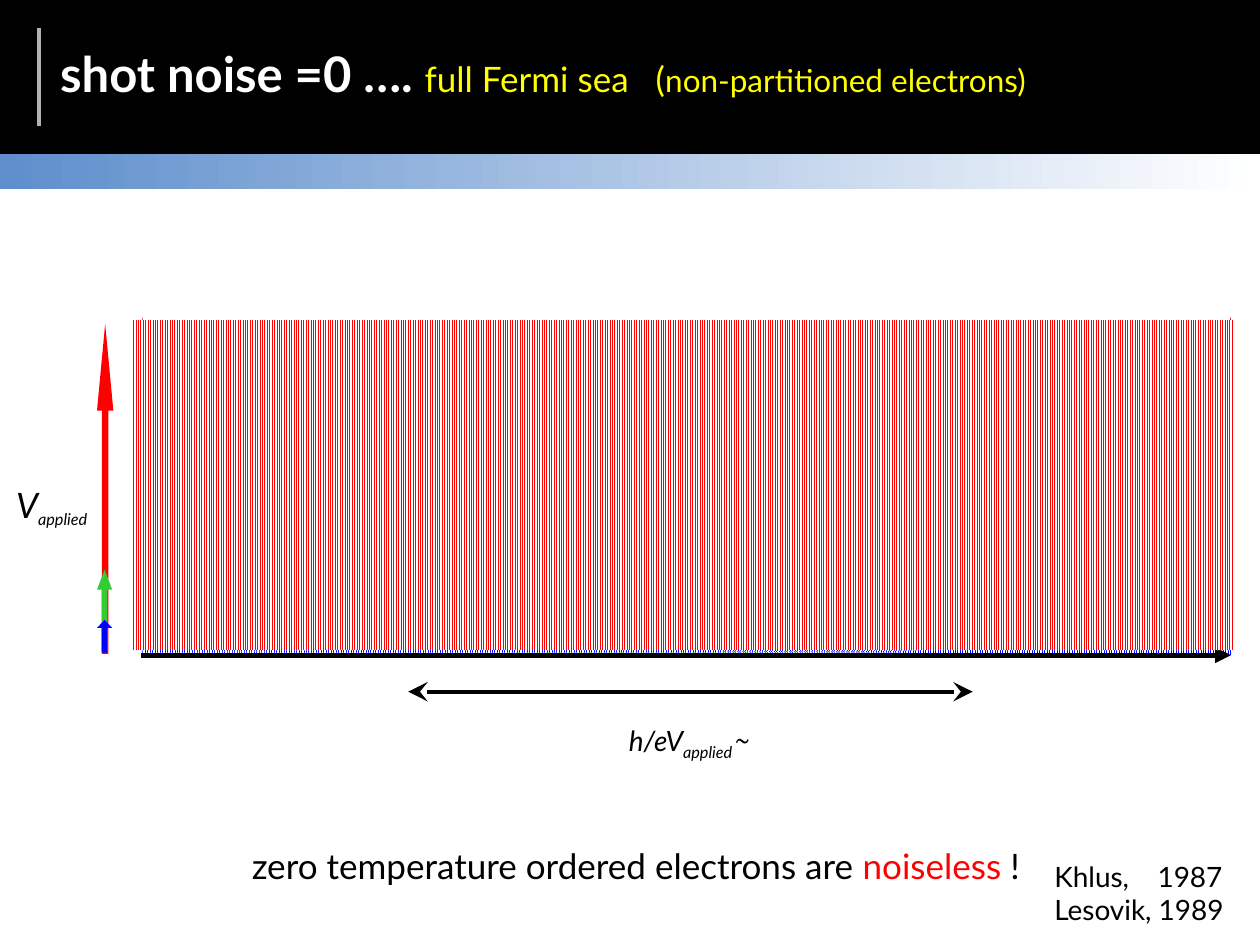
import lxml.etree
import pptx
import pptx.dml.color
import pptx.enum.dml
import pptx.enum.shapes
import pptx.enum.text
import pptx.oxml.ns
import pptx.util

Inches = pptx.util.Inches
RGBColor = pptx.dml.color.RGBColor
MSO_SHAPE = pptx.enum.shapes.MSO_SHAPE
MSO_AUTO_SIZE = pptx.enum.text.MSO_AUTO_SIZE
qn = pptx.oxml.ns.qn

BLACK = RGBColor(0x00, 0x00, 0x00)
WHITE = RGBColor(0xFF, 0xFF, 0xFF)
GREY = RGBColor(0xB2, 0xB2, 0xB2)
SKY = RGBColor(0x5E, 0x8E, 0xCC)
RED = RGBColor(0xFF, 0x00, 0x00)
GREEN = RGBColor(0x33, 0xCC, 0x33)
BLUE = RGBColor(0x00, 0x00, 0xFF)
YELLOW = RGBColor(0xFF, 0xFF, 0x00)

FONT = "Lato"

# Wave outlines: a start point, then cubic segments of three points each.
# The half waves at the edges end with one straight line to their foot.
RED_WAVE = [(2.11, 5.19), (2.08, 5.13), (1.99, 5.25), (1.91, 4.81),
            (1.84, 4.37), (1.76, 2.55), (1.68, 2.54),
            (1.6, 2.54), (1.51, 4.34), (1.44, 4.78),
            (1.36, 5.22), (1.29, 5.11), (1.25, 5.19)]
RED_EDGE = [(1.53, 5.18), (1.5, 5.13), (1.4, 5.26), (1.33, 4.81),
            (1.27, 4.37), (1.16, 2.46), (1.13, 2.52), (1.14, 5.19)]
GREEN_WAVE = [(4.98, 5.19), (4.85, 5.17), (4.47, 5.2), (4.18, 5.09),
              (3.89, 4.98), (3.55, 4.53), (3.24, 4.53),
              (2.92, 4.53), (2.56, 4.98), (2.27, 5.09),
              (1.98, 5.2), (1.67, 5.17), (1.51, 5.19)]
GREEN_EDGE = [(2.77, 5.19), (2.63, 5.17), (2.24, 5.21), (1.97, 5.1),
              (1.69, 4.98), (1.27, 4.51), (1.14, 4.52), (1.14, 5.18)]
BLUE_WAVE = [(9.79, 5.18), (9.46, 5.18), (8.53, 5.19), (7.81, 5.14),
             (7.08, 5.1), (6.23, 4.92), (5.44, 4.92),
             (4.64, 4.92), (3.74, 5.1), (3.02, 5.14),
             (2.3, 5.18), (1.52, 5.17), (1.13, 5.18)]
BLUE_EDGE = [(5.21, 5.17), (4.87, 5.16), (3.88, 5.19), (3.2, 5.14),
             (2.52, 5.1), (1.47, 4.91), (1.13, 4.92), (1.13, 5.2)]


def fill_pattern(shape, color):
    shape.fill.patterned()
    shape.fill.pattern = pptx.enum.dml.MSO_PATTERN.NARROW_VERTICAL
    shape.fill.fore_color.rgb = color
    shape.fill.back_color.rgb = WHITE


def add_block(shapes, kind, box, color=None):
    shape = shapes.add_shape(kind, *map(Inches, box))
    shape.shadow.inherit = False
    shape.line.fill.background()
    if color is not None:
        shape.fill.solid()
        shape.fill.fore_color.rgb = color
    return shape


def add_line(shapes, start, end, color, width, head_size="med", **arrowheads):
    line = shapes.add_connector(pptx.enum.shapes.MSO_CONNECTOR.STRAIGHT,
                                *map(Inches, start + end))
    line.line.color.rgb = color
    line.line.width = pptx.util.Pt(width)
    outline = line.line._get_or_add_ln()
    for tag, kind in arrowheads.items():
        lxml.etree.SubElement(outline, qn("a:" + tag),
                              type=kind, w=head_size, len=head_size)
    lxml.etree.SubElement(line._element.spPr, qn("a:effectLst"))


def add_wave(shapes, controls, color):
    corners = [(Inches(x), Inches(y)) for x, y in controls]
    builder = shapes.build_freeform(*corners[0])
    builder.add_line_segments(corners[1:], close=False)
    wave = builder.convert_to_shape()
    wave.shadow.inherit = False
    wave.line.fill.background()
    fill_pattern(wave, color)
    # Join every three straight segments into one cubic curve
    segments = list(wave._element.iter(qn("a:lnTo")))
    for first in range(0, len(segments) - 2, 3):
        curve, *others = segments[first:first + 3]
        curve.tag = qn("a:cubicBezTo")
        for segment in others:
            curve.append(segment[0])
            segment.getparent().remove(segment)


def add_wave_family(slide, color, wave, edge, count, pitch, mirror_sum,
                    arrow_box, head):
    """Equally spaced waves, two mirrored half waves and a voltage arrow."""
    shapes = slide.shapes.add_group_shape().shapes
    add_wave(shapes, edge, color)
    for index in range(count):
        add_wave(shapes, [(x + index * pitch, y) for x, y in wave], color)
    add_wave(shapes, [(mirror_sum - x, y) for x, y in edge], color)
    arrow = add_block(shapes, MSO_SHAPE.UP_ARROW, arrow_box, color)
    arrow.adjustments[0] = 0.39
    arrow.adjustments[1] = head


def add_text(shapes, box, paragraphs, rtl=False, **frame_values):
    """Each paragraph is a list of (text, size, color, extra format values)."""
    frame = shapes.add_textbox(*map(Inches, box)).text_frame
    frame_format = {"word_wrap": False,
                    "auto_size": MSO_AUTO_SIZE.SHAPE_TO_FIT_TEXT,
                    **frame_values}
    for name, value in frame_format.items():
        setattr(frame, name, value)
    for index, runs in enumerate(paragraphs):
        paragraph = frame.add_paragraph() if index else frame.paragraphs[0]
        if rtl:
            paragraph.alignment = pptx.enum.text.PP_ALIGN.CENTER
            paragraph._p.get_or_add_pPr().set("rtl", "1")
        for text, size, color, extra in runs:
            run = paragraph.add_run()
            run.text = text
            values = {"name": FONT, "size": pptx.util.Pt(size), **extra}
            baseline = values.pop("baseline", None)
            for name, value in values.items():
                setattr(run.font, name, value)
            run.font.color.rgb = color
            if baseline:
                run._r.get_or_add_rPr().set("baseline", baseline)


def add_header(shapes):
    band = add_block(shapes, MSO_SHAPE.RECTANGLE, (0, 0, 10, 1.22), BLACK)
    band.line.color.rgb = BLACK
    band.line.width = pptx.util.Pt(0.75)
    strip = add_block(shapes, MSO_SHAPE.RECTANGLE, (0, 1.22, 10, 0.28))
    strip.fill.gradient()
    strip.fill.gradient_angle = 0
    for stop, color, position in zip(strip.fill.gradient_stops,
                                     (SKY, WHITE), (0, 1)):
        stop.color.rgb = color
        stop.position = position
    add_line(shapes, (0.31, 1), (0.31, 0.22), GREY, 2.25)


def main():
    presentation = pptx.Presentation()
    presentation.slide_width = Inches(10)
    presentation.slide_height = Inches(7.5)
    slide = presentation.slides.add_slide(presentation.slide_layouts[6])
    shapes = slide.shapes
    italic = {"italic": True}
    subscript = {"italic": True, "baseline": "-25000"}

    add_header(shapes)

    # Wave packets for three applied voltages
    add_wave_family(slide, RED, RED_WAVE, RED_EDGE, 14, 0.58, 10.9,
                    (0.77, 2.57, 0.13, 2.62), 5.31)
    add_wave_family(slide, GREEN, GREEN_WAVE, GREEN_EDGE, 3, 2.21, 10.92,
                    (0.77, 4.52, 0.12, 0.65), 1.33)
    add_wave_family(slide, BLUE, BLUE_WAVE, BLUE_EDGE, 1, 0, 10.9,
                    (0.77, 4.92, 0.12, 0.26), 0.53)

    # Time axis and voltage label
    add_line(shapes, (9.77, 5.2), (1.12, 5.2), BLACK, 3, headEnd="triangle")
    add_text(shapes, (0.03, 3.79, 1.13, 0.43),
             [[("V", 20, BLACK, italic), ("applied", 16, BLACK, subscript)]],
             word_wrap=True)

    # Packet width
    width_shapes = shapes.add_group_shape().shapes
    add_text(width_shapes, (4.82, 5.69, 1.29, 0.37),
             [[("~h/eV", 16, BLACK, italic),
               ("applied", 16, BLACK, subscript)]], rtl=True)
    add_line(width_shapes, (3.24, 5.49), (7.72, 5.49), BLACK, 2.25, "lg",
             headEnd="stealth", tailEnd="stealth")

    # Conclusion and title
    add_text(shapes, (1.9, 6.65, 6.44, 0.44),
             [[("zero temperature ordered electrons are ", 20, BLACK, {}),
               ("noiseless", 20, RED, {}), (" !", 20, BLACK, {})]])
    add_text(shapes, (0.38, 0.2, 8.5, 0.76),
             [[("shot noise =0 …. ", 28, WHITE, {"bold": True}),
               ("full Fermi sea   (", 20, YELLOW, {}),
               ("non-partitioned electrons)", 18, YELLOW, {})]],
             word_wrap=True, auto_size=MSO_AUTO_SIZE.NONE,
             vertical_anchor=pptx.enum.text.MSO_ANCHOR.MIDDLE)

    # Full Fermi sea and references
    sea = add_block(shapes, MSO_SHAPE.RECTANGLE, (1.04, 2.54, 8.74, 2.62))
    fill_pattern(sea, RED)
    add_text(shapes, (8.27, 6.77, 1.59, 0.65),
             [[("Khlus,    1987", 16, BLACK, {})],
              [("Lesovik, 1989", 16, BLACK, {})]])

    presentation.save("out.pptx")


if __name__ == "__main__":
    main()
